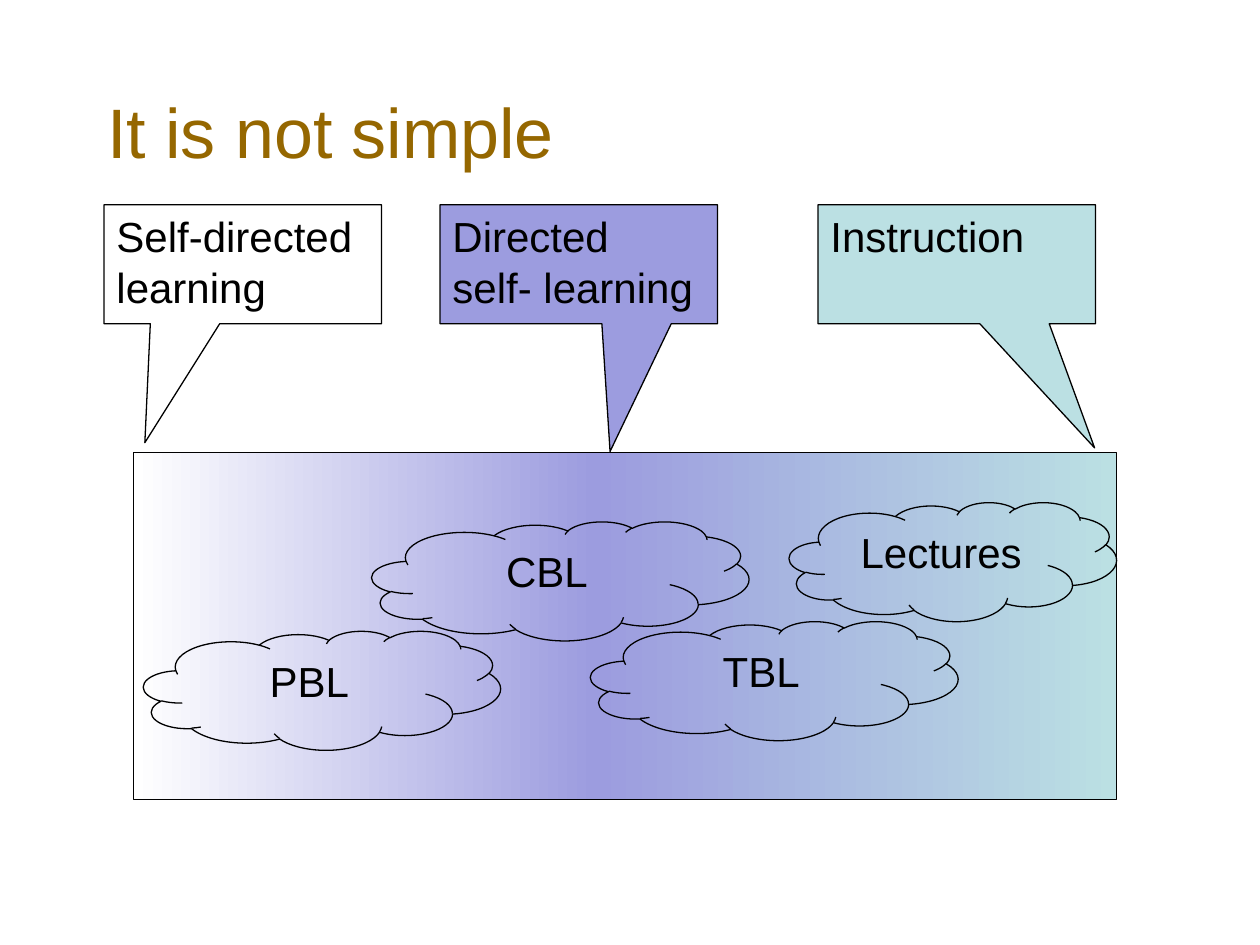
from copy import deepcopy
from dataclasses import dataclass

from pptx import Presentation
from pptx import util as u
from pptx.dml import color
from pptx.enum import shapes, text
from pptx.oxml import ns

Pt = u.Pt


@dataclass(frozen=True)
class Theme:
    font: str = "Arial"
    title_size: float = 40
    body_size: float = 24
    line_width: float = 0.75
    title: str = "956700"
    ink: str = "000000"
    white: str = "FFFFFF"
    violet: str = "9C9CDF"
    aqua: str = "BBE0E3"


THEME = Theme()


def rgb(value):
    return color.RGBColor.from_string(value)


def write(frame, words, size, ink, align):
    frame.text = words
    frame.word_wrap = True
    for para in frame.paragraphs:
        para.alignment = align
        for span in para.runs:
            span.font.name = THEME.font
            span.font.size = Pt(size)
            span.font.color.rgb = rgb(ink)


def add_outlined(page, kind, box, fill=None):
    shape = page.shapes.add_shape(kind, *map(Pt, box))
    shape.shadow.inherit = False
    shape.line.color.rgb = rgb(THEME.ink)
    shape.line.width = Pt(THEME.line_width)
    if fill:
        shape.fill.solid()
        shape.fill.fore_color.rgb = rgb(fill)
    else:
        shape.fill.background()
    return shape


def label(shape, words, align):
    write(shape.text_frame, words, THEME.body_size, THEME.ink, align)
    shape.text_frame.vertical_anchor = text.MSO_ANCHOR.TOP


def place_title(page, box, words):
    title = page.shapes.title
    title.left, title.top, title.width, title.height = map(Pt, box)
    write(title.text_frame, words, THEME.title_size, THEME.title, text.PP_ALIGN.LEFT)
    title.text_frame.vertical_anchor = text.MSO_ANCHOR.BOTTOM


def fill_spectrum(shape, stops):
    shape.fill.gradient()
    shape.fill.gradient_angle = 0
    stop_list = shape._element.spPr.find(ns.qn("a:gradFill")).find(ns.qn("a:gsLst"))
    while len(stop_list) < len(stops):
        stop_list.append(deepcopy(stop_list[0]))
    for stop, (position, tint) in zip(shape.fill.gradient_stops, stops):
        stop.position = position
        stop.color.rgb = rgb(tint)


def place_spectrum(page, box):
    band = add_outlined(page, shapes.MSO_SHAPE.RECTANGLE, box)
    fill_spectrum(band, [(0, THEME.white), (0.47, THEME.violet), (1, THEME.aqua)])


def place_callouts(page, box):
    left, top, width, height = box
    callouts = [
        (0, "Self-directed learning", None, (-0.353, 1.499)),
        (192, "Directed\nself- learning", THEME.violet, (0.113, 1.573)),
        (408, "Instruction", THEME.aqua, (0.497, 1.543)),
    ]
    for offset, words, fill, tip in callouts:
        callout = add_outlined(
            page,
            shapes.MSO_SHAPE.RECTANGULAR_CALLOUT,
            (left + offset, top, width, height),
            fill,
        )
        callout.adjustments[0], callout.adjustments[1] = tip
        label(callout, words, text.PP_ALIGN.LEFT)


def place_clouds(page, box):
    left, top = box[:2]
    height = 68
    clouds = [
        ("PBL", 5.5, 102, 204),
        ("CBL", 136, 39.5, 215.5),
        ("TBL", 261, 96.5, 210),
        ("Lectures", 374.5, 28.5, 187),
    ]
    for words, across, down, width in clouds:
        cloud = add_outlined(
            page, shapes.MSO_SHAPE.CLOUD, (left + across, top + down, width, height)
        )
        label(cloud, words, text.PP_ALIGN.CENTER)


def main():
    deck = Presentation()
    deck.slide_width, deck.slide_height = Pt(720), Pt(540)
    page = deck.slides.add_slide(deck.slide_layouts[5])
    band_box = (76.5, 258.5, 561.5, 198.5)
    place_title(page, (54, 30, 612, 72), "It is not simple")
    place_spectrum(page, band_box)
    place_callouts(page, (59.5, 117, 158.5, 68))
    place_clouds(page, band_box)
    deck.save("out.pptx")


if __name__ == "__main__":
    main()
